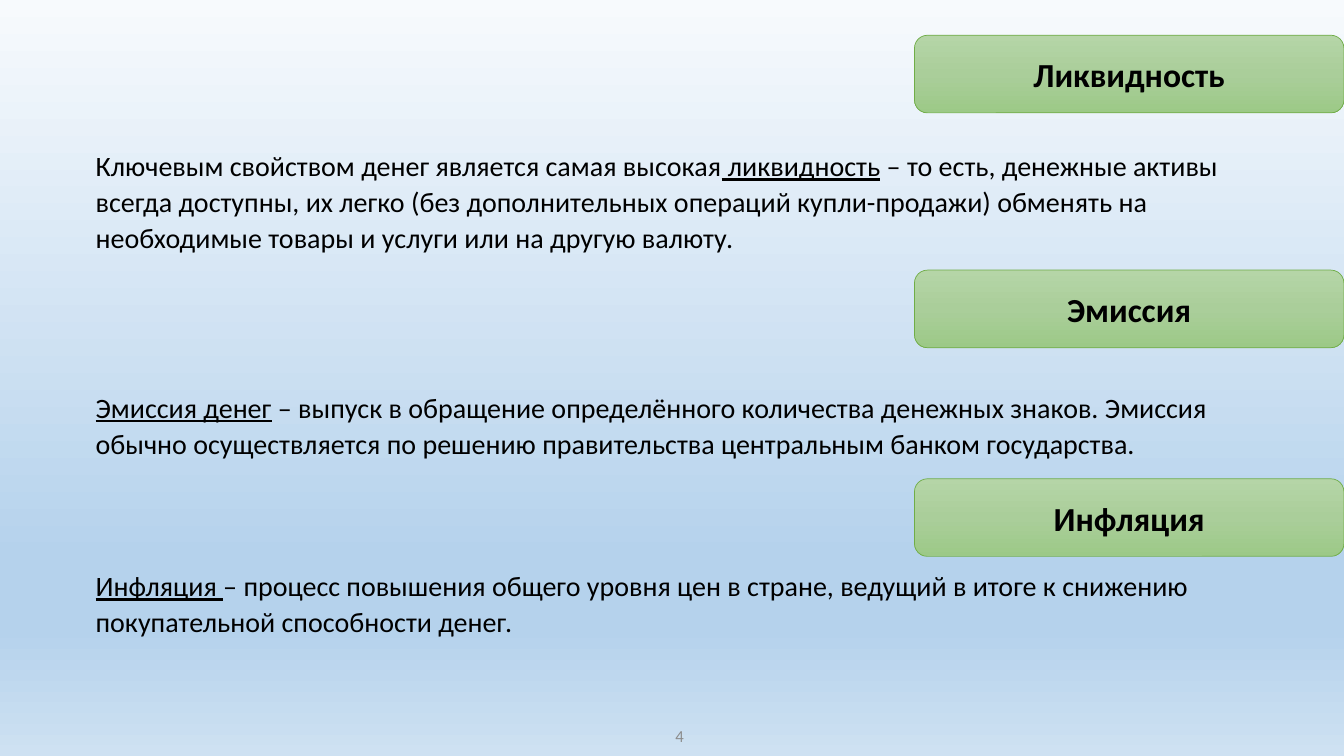
from dataclasses import dataclass

from lxml import etree
from pptx import Presentation
from pptx.dml.color import RGBColor
from pptx.enum.shapes import MSO_SHAPE
from pptx.enum.text import MSO_ANCHOR, PP_ALIGN
from pptx.oxml.ns import qn
from pptx.util import Inches, Pt

ROUNDED = MSO_SHAPE.ROUNDED_RECTANGLE
MIDDLE = MSO_ANCHOR.MIDDLE
TOP = MSO_ANCHOR.TOP
LEFT, CENTER, RIGHT = PP_ALIGN.LEFT, PP_ALIGN.CENTER, PP_ALIGN.RIGHT


@dataclass(frozen=True)
class Theme:
    """Colours, type sizes and slide dimensions."""
    font: str = "Calibri"
    text: str = "000000"
    muted: str = "8C8C8C"
    outline: str = "70AD47"
    sky: tuple = ((0, "F7FAFD"), (74, "B5D2EC"), (83, "B5D2EC"), (100, "CEE1F2"))
    green: tuple = ((0, "B5D5A7"), (50, "AACE9A"), (100, "9CC987"))
    heading_size: int = 24
    body_size: int = 20
    number_size: int = 12
    line_spacing: float = 1.07
    space_after: int = 8
    section_gap: int = 68
    width: float = 13.33
    height: float = 7.5


THEME = Theme()
TAB_LEFT, TAB_WIDTH, TAB_HEIGHT = 9.07, 4.26, 0.77
BODY_LEFT, BODY_WIDTH = 0.85, 11.62

HEADINGS = (("Ликвидность", 0.35), ("Эмиссия", 2.68), ("Инфляция", 4.75))
LIQUIDITY = (
    (("Ключевым свойством денег является самая высокая", False),
     (" ликвидность", True),
     (" – то есть, денежные активы всегда доступны, их легко (без дополнительных "
      "операций купли-продажи) обменять на необходимые товары и услуги или на "
      "другую валюту.", False)),
)
EMISSION_AND_INFLATION = (
    (("Эмиссия денег", True),
     (" – выпуск в обращение определённого количества денежных знаков. Эмиссия "
      "обычно осуществляется по решению правительства центральным банком "
      "государства.", False)),
    (("Инфляция ", True),
     ("– процесс повышения общего уровня цен в стране, ведущий в итоге к снижению "
      "покупательной способности денег.", False)),
)


def paint_gradient(fill, owner, stops):
    """Fill the owner from top to bottom with the given colour stops."""
    fill.gradient()
    fill.gradient_angle = 270
    stop_list = next(owner.element.iter(qn("a:gsLst")))
    for old_stop in list(stop_list):
        stop_list.remove(old_stop)
    for percent, color in stops:
        stop = etree.SubElement(stop_list, qn("a:gs"), pos=str(percent * 1000))
        etree.SubElement(stop, qn("a:srgbClr"), val=color)


def style_run(run, size, color=THEME.text, bold=False, underline=False):
    """Apply the theme font and the given emphasis to a run."""
    run.font.name = THEME.font
    run.font.size = Pt(size)
    run.font.color.rgb = RGBColor.from_string(color)
    run.font.bold = bold
    run.font.underline = underline


def write_label(shape, text, size, align, color=THEME.text, bold=False):
    """Write one vertically centred line in a shape."""
    frame = shape.text_frame
    frame.text = text
    frame.word_wrap = True
    frame.vertical_anchor = MIDDLE
    paragraph = frame.paragraphs[0]
    paragraph.alignment = align
    style_run(paragraph.runs[0], size, color, bold)


def add_heading(slide, text, box):
    """Add a green rounded heading tab."""
    tab = slide.shapes.add_shape(ROUNDED, *map(Inches, box))
    tab.shadow.inherit = False
    paint_gradient(tab.fill, tab, THEME.green)
    tab.line.color.rgb = RGBColor.from_string(THEME.outline)
    tab.line.width = Pt(0.5)
    write_label(tab, text, THEME.heading_size, CENTER, bold=True)


def add_definitions(slide, definitions, box):
    """Add definitions with underlined terms, one paragraph each."""
    frame = slide.shapes.add_textbox(*map(Inches, box)).text_frame
    frame.word_wrap = True
    frame.vertical_anchor = TOP
    for index, pieces in enumerate(definitions):
        paragraph = frame.add_paragraph() if index else frame.paragraphs[0]
        paragraph.alignment = LEFT
        paragraph.line_spacing = THEME.line_spacing
        paragraph.space_before = Pt(THEME.section_gap if index else 0)
        paragraph.space_after = Pt(THEME.space_after)
        for text, underline in pieces:
            run = paragraph.add_run()
            run.text = text
            style_run(run, THEME.body_size, underline=underline)


def add_slide_number(slide, number, box):
    """Add the slide number at the foot."""
    label = slide.shapes.add_textbox(*map(Inches, box))
    write_label(label, str(number), THEME.number_size, RIGHT, THEME.muted)


def build_terms_slide(presentation):
    """Build the slide of money terms."""
    slide = presentation.slides.add_slide(presentation.slide_layouts[6])
    paint_gradient(slide.background.fill, slide, THEME.sky)
    add_slide_number(slide, 4, (6.44, 7.1, 0.44, 0.4))
    add_definitions(slide, EMISSION_AND_INFLATION, (BODY_LEFT, 3.8, BODY_WIDTH, 2.6))
    add_definitions(slide, LIQUIDITY, (BODY_LEFT, 1.4, BODY_WIDTH, 1.18))
    for text, top in HEADINGS:
        add_heading(slide, text, (TAB_LEFT, top, TAB_WIDTH, TAB_HEIGHT))


def main():
    """Create and save the presentation."""
    presentation = Presentation()
    presentation.slide_width = Inches(THEME.width)
    presentation.slide_height = Inches(THEME.height)
    build_terms_slide(presentation)
    presentation.save("out.pptx")


if __name__ == "__main__":
    main()
